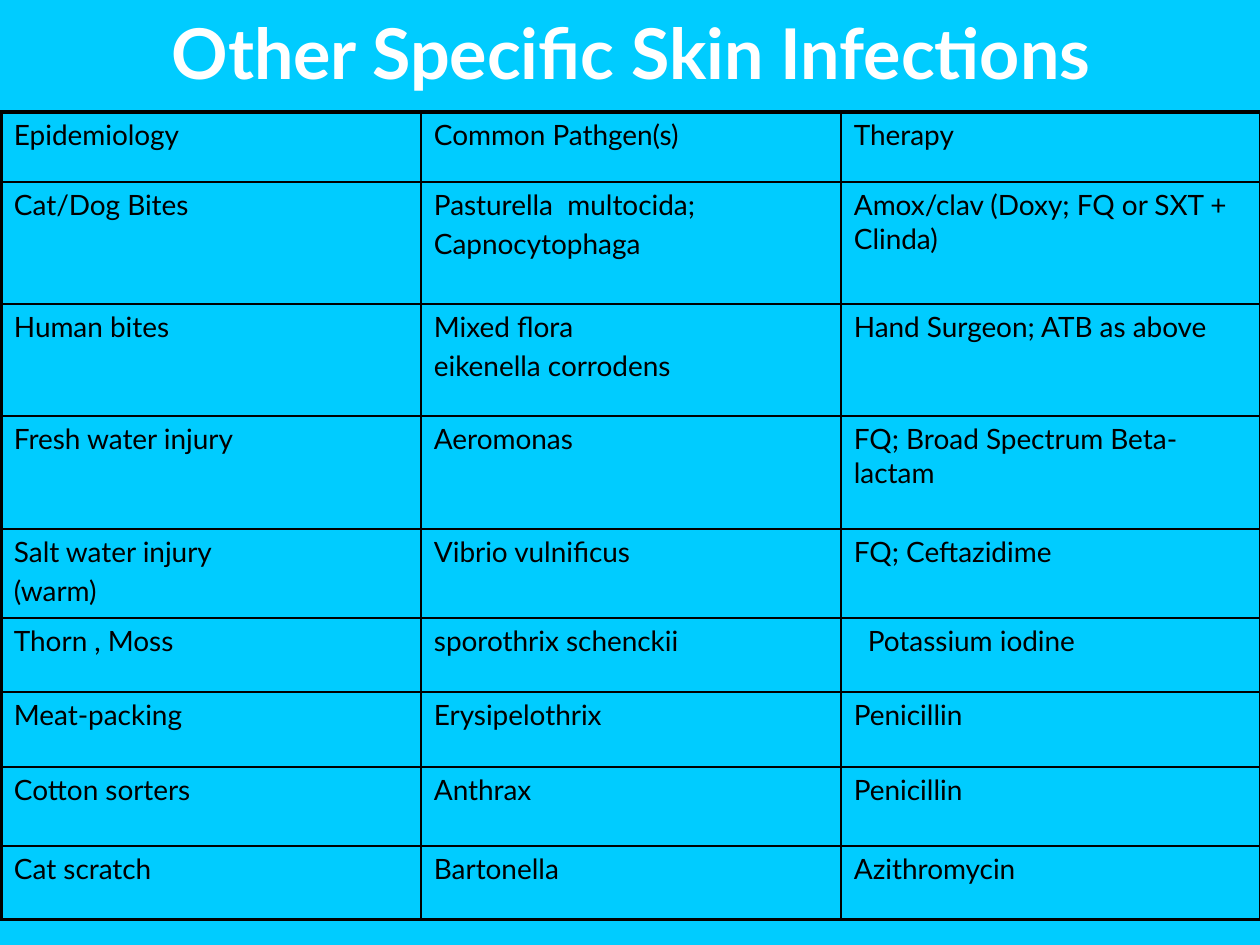
from pptx import Presentation
from pptx.dml.color import RGBColor as RGB
from pptx.enum.text import MSO_ANCHOR as Anchor, MSO_AUTO_SIZE as AutoSize, PP_ALIGN as Align
from pptx.oxml.ns import qn
from pptx.util import Emu, Pt
from lxml.etree import SubElement

EMU_PER_PX = 914400 / 126
FONT = "Lato"
COLORS = {"background": "00CCFF", "title": "FFFFFF", "text": "000000", "border": "000000"}
THIN, THICK = 1, 2.25
CELL_MARGIN, INDENT = 13, 14

COLUMN_WIDTH = 420
ROW_HEIGHTS = [70, 122, 112, 113, 89, 74, 75, 79, 74]
INFECTIONS = [
    ("Epidemiology", "Common Pathgen(s)", "Therapy"),
    ("Cat/Dog Bites", "Pasturella  multocida;\nCapnocytophaga", "Amox/clav (Doxy; FQ or SXT + Clinda)"),
    ("Human bites", "Mixed flora\neikenella corrodens", "Hand Surgeon; ATB as above"),
    ("Fresh water injury", "Aeromonas", "FQ; Broad Spectrum Beta-lactam"),
    ("Salt water injury\n(warm)", "Vibrio vulnificus", "FQ; Ceftazidime"),
    ("Thorn , Moss", "sporothrix schenckii", "Potassium iodine"),
    ("Meat-packing", "Erysipelothrix", "Penicillin"),
    ("Cotton sorters", "Anthrax", "Penicillin"),
    ("Cat scratch", "Bartonella", "Azithromycin"),
]
INDENTED = {"Potassium iodine"}


def px(length):
    return Emu(round(length * EMU_PER_PX))


class SlideBuilder:
    def __init__(self, prs):
        self.slide = prs.slides.add_slide(prs.slide_layouts[5])
        fill = self.slide.background.fill
        fill.solid()
        fill.fore_color.rgb = RGB.from_string(COLORS["background"])

    def add_run(self, paragraph, text, size, color, bold=False):
        run = paragraph.add_run()
        run.text = text
        font = run.font
        font.name, font.size, font.bold = FONT, Pt(size), bold
        font.color.rgb = RGB.from_string(COLORS[color])

    def title(self, text, left, top, width, height):
        title = self.slide.shapes.title
        title.left, title.top, title.width, title.height = map(px, (left, top, width, height))
        frame = title.text_frame
        frame.auto_size = AutoSize.NONE
        frame.vertical_anchor = Anchor.BOTTOM
        frame.paragraphs[0].alignment = Align.CENTER
        self.add_run(frame.paragraphs[0], text, 40, "title", bold=True)

    def borders(self, cell, widths):
        """Draw the cell's edges; widths maps L, R, T and B to points."""
        properties = cell._tc.get_or_add_tcPr()
        for side, width in widths.items():
            line = SubElement(properties, qn(f"a:ln{side}"), w=str(Pt(width)))
            SubElement(SubElement(line, qn("a:solidFill")), qn("a:srgbClr"), val=COLORS["border"])

    def cell(self, cell, text):
        cell.margin_left = px(CELL_MARGIN + (INDENT if text in INDENTED else 0))
        cell.vertical_anchor = Anchor.TOP
        frame = cell.text_frame
        for i, line in enumerate(text.split("\n")):
            paragraph = frame.add_paragraph() if i else frame.paragraphs[0]
            paragraph.space_before = Pt(3.2)
            self.add_run(paragraph, line, 16, "text")

    def table(self, rows, left, top, column_width, row_heights):
        last_row, last_column = len(rows) - 1, len(rows[0]) - 1
        table = self.slide.shapes.add_table(
            len(rows), len(rows[0]), px(left), px(top),
            px(column_width * len(rows[0])), px(sum(row_heights))).table
        table.first_row = table.horz_banding = False
        for column in table.columns:
            column.width = px(column_width)
        for r, (texts, height) in enumerate(zip(rows, row_heights)):
            table.rows[r].height = px(height)
            for c, text in enumerate(texts):
                cell = table.cell(r, c)
                outer = {"L": c == 0, "R": c == last_column, "T": r == 0, "B": r == last_row}
                self.borders(cell, {side: THICK if edge else THIN for side, edge in outer.items()})
                cell.fill.background()
                self.cell(cell, text)


def main():
    prs = Presentation()
    prs.slide_width, prs.slide_height = px(1260), px(945)
    builder = SlideBuilder(prs)
    builder.title("Other Specific Skin Infections", 1, -13, 1260, 113)
    builder.table(INFECTIONS, 1, 112, COLUMN_WIDTH, ROW_HEIGHTS)
    prs.save("out.pptx")


if __name__ == "__main__":
    main()
